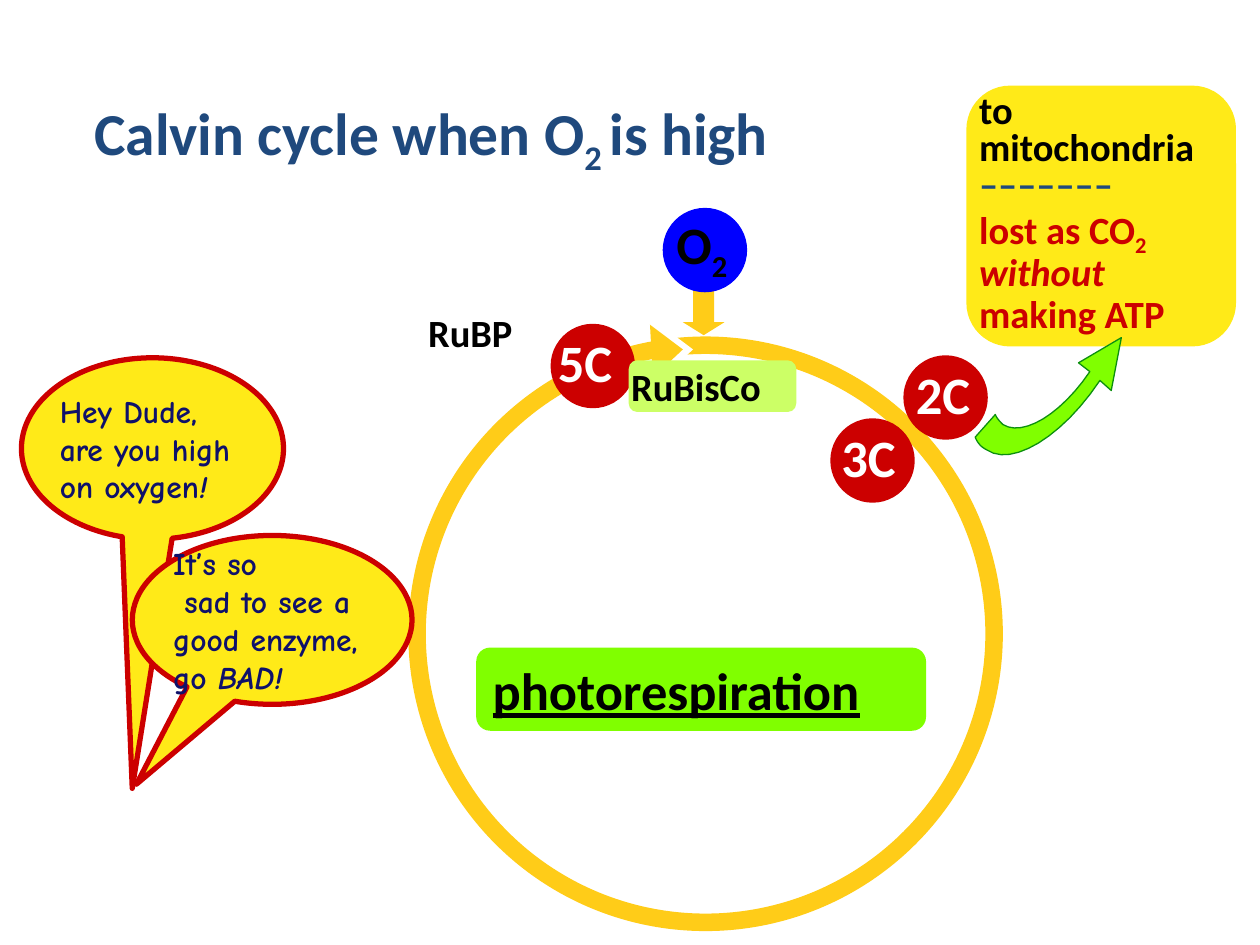
"""Build a slide on the Calvin cycle when oxygen is high."""
from pptx import Presentation
from pptx.dml.color import RGBColor
from pptx.enum.shapes import MSO_SHAPE
from pptx.enum.text import MSO_ANCHOR, MSO_AUTO_SIZE, PP_ALIGN
from pptx.util import Inches, Pt

HEX = {
    "gold": "FFCC18", "yellow": "FFEA18", "red": "CC0000", "green": "80FF00",
    "lime": "CCFF66", "edge": "0C8F0F", "blue": "0000FF", "navy": "1F497D",
    "ink": "0F116A", "black": "000000", "white": "FFFFFF",
}


def tint(name):
    return RGBColor.from_string(HEX[name])


def paint(shape, fill=None, line=None, width=1):
    shape.shadow.inherit = False
    if fill:
        shape.fill.solid()
        shape.fill.fore_color.rgb = tint(fill)
    else:
        shape.fill.background()
    if line:
        shape.line.color.rgb = tint(line)
        shape.line.width = Pt(width)
    else:
        shape.line.fill.background()


def add_form(slide, kind, box, fill=None, line=None, width=1, adj=(), turn=0):
    shape = slide.shapes.add_shape(kind, *map(Inches, box))
    for n, value in enumerate(adj):
        shape.adjustments[n] = value
    shape.rotation = turn
    paint(shape, fill, line, width)
    return shape


def add_run(para, text, mark, size, color, face):
    run = para.add_run()
    run.text = text
    font = run.font
    font.name, font.size, font.bold = face, Pt(size), True
    font.color.rgb = tint(color)
    if mark == "italic":
        font.italic = True
    elif mark == "line":
        font.underline = True
    elif mark == "sub":
        run._r.get_or_add_rPr().set("baseline", "-25000")


def write(shape, paras, size, face="Calibri", inset=None, grow=True):
    """Fill a shape with (colour, spacing, [(text, mark), ...]) paragraphs."""
    frame = shape.text_frame
    frame.word_wrap = False
    frame.vertical_anchor = MSO_ANCHOR.MIDDLE
    frame.auto_size = MSO_AUTO_SIZE.SHAPE_TO_FIT_TEXT if grow else MSO_AUTO_SIZE.NONE
    if inset is not None:
        frame.margin_left = frame.margin_right = Inches(inset)
        frame.margin_top = frame.margin_bottom = Inches(inset)
    for n, (color, space, parts) in enumerate(paras):
        para = frame.add_paragraph() if n else frame.paragraphs[0]
        para.alignment = PP_ALIGN.LEFT
        if space:
            para.line_spacing = space
        for text, mark in parts:
            for row, piece in enumerate(text.split("\n")):
                if row:
                    para.add_line_break()
                if piece:
                    add_run(para, piece, mark, size, color, face)


def add_label(slide, box, parts, size, color):
    label = slide.shapes.add_textbox(*map(Inches, box))
    write(label, [(color, None, parts)], size)


def add_ball(slide, left, top, fill):
    add_form(slide, MSO_SHAPE.OVAL, (left, top, 0.67, 0.67), fill)


def add_carbon(slide, text, left, top, shift):
    add_ball(slide, left, top, "red")
    add_label(slide, (left + shift, top, 0.73, 0.6), [(text, "")], 30, "white")


def add_card(slide, box, fill, paras, size, inset=None):
    card = add_form(slide, MSO_SHAPE.ROUNDED_RECTANGLE, box, fill, adj=[0.167])
    write(card, paras, size, inset=inset)


def add_speech(slide, box, tip, paras):
    bubble = add_form(slide, MSO_SHAPE.OVAL_CALLOUT, box, "yellow", "red", 3, tip)
    write(bubble, [("ink", None, parts) for parts in paras], 18, "Comic Neue", 0, False)


def bend(*knots, steps=12):
    """Return points along a cubic curve, without its start."""
    points = []
    for n in range(1, steps + 1):
        t = n / steps
        weights = ((1 - t) ** 3, 3 * t * (1 - t) ** 2, 3 * t * t * (1 - t), t ** 3)
        points.append(tuple(sum(w * k[axis] for w, k in zip(weights, knots))
                            for axis in (0, 1)))
    return points


def add_swoosh(slide):
    points = [
        (8.65, 2.95),
        *bend((8.65, 2.95), (8.42, 3.29), (8.12, 3.47), (7.96, 3.37)),
        *bend((7.96, 3.37), (7.94, 3.35), (7.91, 3.32), (7.9, 3.29)),
        (7.74, 3.47),
        *bend((7.74, 3.47), (7.76, 3.52), (7.79, 3.55), (7.83, 3.57)),
        *bend((7.83, 3.57), (8.03, 3.71), (8.43, 3.47), (8.73, 3.02)),
        (8.82, 3.1), (8.9, 2.68), (8.56, 2.88),
    ]
    start, *rest = [(Inches(x), Inches(y)) for x, y in points]
    pen = slide.shapes.build_freeform(*start)
    pen.add_line_segments(rest, close=True)
    paint(pen.convert_to_shape(), "green", "edge", 0.75)


def add_cycle(slide):
    add_form(slide, MSO_SHAPE.DOWN_ARROW, (5.42, 2.24, 0.33, 0.42), "gold",
             adj=[0.5, 0.312])
    add_form(slide, MSO_SHAPE.OVAL, (3.31, 2.74, 4.58, 4.58), line="gold", width=10)
    for left, fill in ((5.25, "white"), (5.17, "gold")):
        add_form(slide, MSO_SHAPE.RIGHT_ARROW, (left, 2.57, 0.25, 0.42), fill,
                 adj=[0.484, 1], turn=356.9)


def add_oxygen(slide):
    add_ball(slide, 5.26, 1.65, "blue")
    add_form(slide, MSO_SHAPE.RECTANGLE, (5.49, 1.7, 0.2, 0.53), "blue")
    add_label(slide, (5.27, 1.67, 0.68, 0.6), [("O", ""), ("2", "sub")], 30, "black")


def main():
    deck = Presentation()
    deck.slide_width, deck.slide_height = Inches(10), Inches(7.5)
    slide = deck.slides.add_slide(deck.slide_layouts[6])

    add_cycle(slide)
    add_label(slide, (0.65, 0.75, 6.69, 0.67),
              [("Calvin cycle when O", ""), ("2 ", "sub"), ("is high", "")], 34, "navy")
    add_carbon(slide, "5C", 4.37, 2.57, -0.04)
    add_label(slide, (3.3, 2.4, 1.03, 0.47), [("RuBP", "")], 22, "black")
    add_carbon(slide, "3C", 6.59, 3.32, -0.01)
    add_carbon(slide, "2C", 7.17, 2.82, 0)
    add_card(slide, (7.67, 0.68, 2.14, 2.07), "yellow", [
        ("black", 0.8, [("to \nmitochondria", "")]),
        ("navy", 0.8, [("–––––––", "")]),
        ("red", 0.9, [("lost as CO", ""), ("2 \n", "sub"),
                      ("without \n", "italic"), ("making ATP", "")]),
    ], 22, 0)
    add_swoosh(slide)
    add_card(slide, (3.78, 5.14, 3.57, 0.66), "green",
             [("black", None, [("photorespiration", "line")])], 30)
    add_oxygen(slide)
    add_speech(slide, (0.17, 2.84, 2.08, 1.44), (-0.077, 1.873), [
        [("Hey Dude,", "")],
        [("are you high\non oxygen", ""), ("!", "italic")],
    ])
    add_card(slide, (4.99, 2.86, 1.33, 0.41), "lime",
             [("black", None, [("RuBisCo", "")])], 22, 0)
    add_speech(slide, (1.05, 4.25, 2.22, 1.34), (-0.485, 0.973), [
        [("It’s so \n sad to see a\ngood enzyme,\ngo ", ""), ("BAD!", "italic")],
    ])
    deck.save("out.pptx")


if __name__ == "__main__":
    main()
